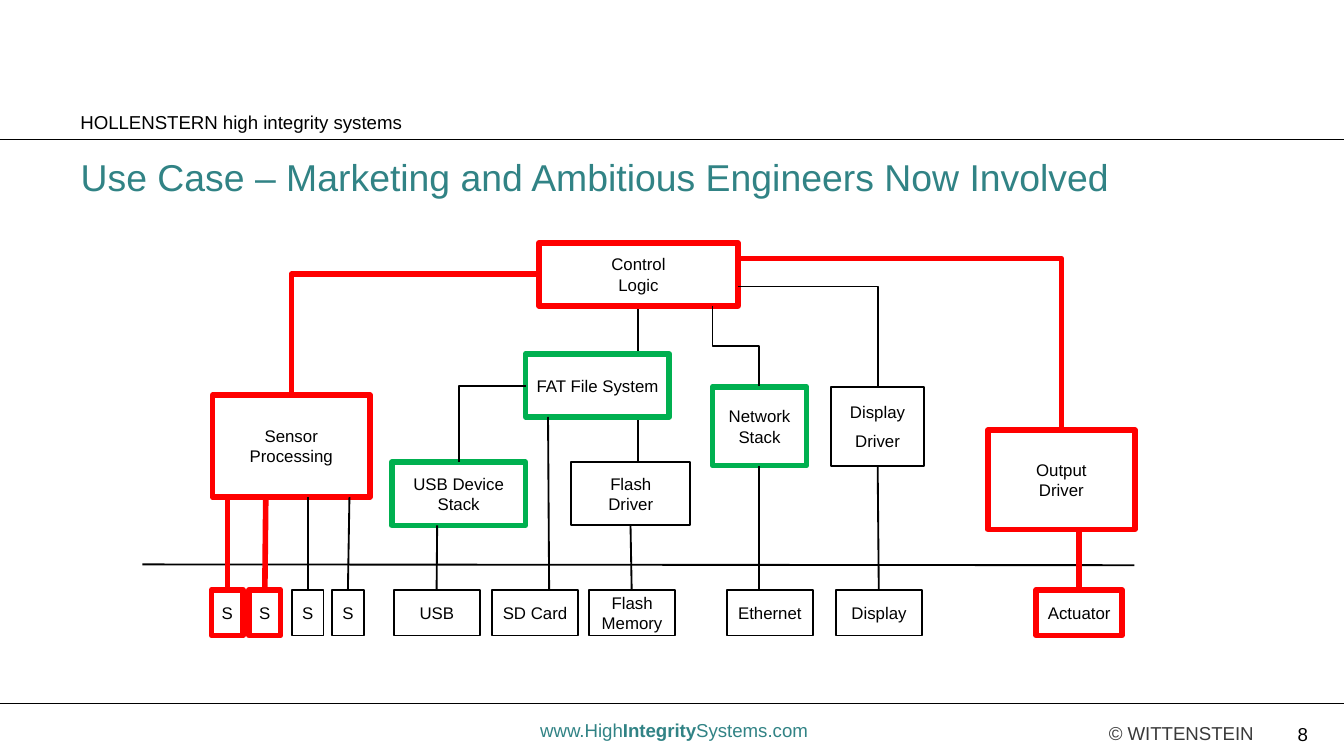
from lxml import etree
from pptx import Presentation
from pptx.dml.color import RGBColor
from pptx.enum import shapes as es, text as et
from pptx.oxml.ns import qn
from pptx.util import Pt

BLACK, RED, GREEN, TEAL = "000000", "FF0000", "00B050", "318385"
hue = RGBColor.from_string
left, mid, right = et.PP_ALIGN.LEFT, et.PP_ALIGN.CENTER, et.PP_ALIGN.RIGHT

deck = Presentation()
deck.slide_width, deck.slide_height = Pt(720), Pt(405)
slide = deck.slides.add_slide(deck.slide_layouts[5])
items = slide.shapes


def write(frame, lines, size, color, align, pad=(0, 0), gap=0):
    frame.word_wrap = True
    frame.margin_left = frame.margin_right = Pt(pad[0])
    frame.margin_top = frame.margin_bottom = Pt(pad[1])
    for i, line in enumerate(lines):
        para = frame.add_paragraph() if i else frame.paragraphs[0]
        para.alignment = align
        para.space_before = Pt(gap if i else 0)
        for words, bold in line:
            run = para.add_run()
            run.text = words
            run.font.name = "Arial"
            run.font.size = Pt(size)
            run.font.bold = bold
            run.font.color.rgb = hue(color)


def wire(x1, y1, x2, y2, color=BLACK, width=1, bent=False):
    kind = es.MSO_CONNECTOR.ELBOW if bent else es.MSO_CONNECTOR.STRAIGHT
    link = items.add_connector(kind, Pt(x1), Pt(y1), Pt(x2), Pt(y2))
    link.line.color.rgb = hue(color)
    link.line.width = Pt(width)
    etree.SubElement(link._element.spPr, qn("a:effectLst"))
    return link


for y in (74.8, 376.7):
    wire(0, y, 720, y, width=0.1)

labels = [
    (277.2, 385.2, 167.8, 10, TEAL, mid, (0, 0),
     [("www.High", False), ("Integrity", True), ("Systems.com", False)]),
    (594, 386.8, 80.6, 9, "3A3A3A", left, (0, 0), [("© WITTENSTEIN", False)]),
    (668.2, 387.4, 32.4, 9, BLACK, right, (0, 0), [("8", False)]),
    (36, 55.7, 260, 19.4, BLACK, left, (7.2, 3.6),
     [("HOLLENSTERN high integrity systems", False)]),
]
for x, y, w, h, color, align, pad, runs in labels:
    frame = items.add_textbox(Pt(x), Pt(y), Pt(w), Pt(h)).text_frame
    write(frame, [runs], 10, color, align, pad)

title = items.title
title.left, title.top, title.width, title.height = Pt(36), Pt(79.2), Pt(664.6), Pt(26.6)
frame = title.text_frame
frame.auto_size = et.MSO_AUTO_SIZE.NONE
frame.vertical_anchor = et.MSO_ANCHOR.TOP
write(frame, [[("Use Case – Marketing and Ambitious Engineers Now Involved", False)]],
      20, TEAL, left, (7.2, 3.6))

wire(76.3, 302.4, 607.7, 302.8)
wire(342, 164.1, 342, 247.7)

row, tall = 316, 24.5
boxes = [
    (288.7, 130.1, 106.6, 33.8, RED, ["Control", "Logic"]),
    (445, 207.2, 50.2, 42.5, BLACK, ["Display", "Driver"]),
    (529.2, 230.4, 78.8, 53.2, RED, ["Output", "Driver"]),
    (113.9, 211.7, 84.3, 54.7, RED, ["Sensor", "Processing"]),
    (306, 247.7, 63.8, 33.8, BLACK, ["Flash", "Driver"]),
    (209.9, 247.7, 71.6, 33.8, GREEN, ["USB Device Stack"]),
    (281.6, 189.6, 77, 33.8, GREEN, ["FAT File System"]),
    (381.7, 207.2, 50.4, 42.2, GREEN, ["Network Stack"]),
]
for x, name in [(211, "USB"), (263.6, "SD Card"), (315.6, "Flash Memory"),
                (389.4, "Ethernet"), (447.9, "Display"), (555.1, "Actuator")]:
    boxes.append((x, row, 46, tall, RED if name == "Actuator" else BLACK, [name]))
for x, color in [(113.3, RED), (133.4, RED), (156.4, BLACK), (177.9, BLACK)]:
    boxes.append((x, row, 17, tall, color, ["S"]))

for x, y, w, h, color, lines in boxes:
    box = items.add_shape(es.MSO_SHAPE.RECTANGLE, Pt(x), Pt(y), Pt(w), Pt(h))
    box.shadow.inherit = False
    if lines[0] == "FAT File System":
        box.fill.solid()
        box.fill.fore_color.rgb = hue("FFFFFF")
    else:
        box.fill.background()
    box.line.color.rgb = hue(color)
    box.line.width = Pt(1 if color == BLACK else 3)
    frame = box.text_frame
    frame.vertical_anchor = et.MSO_ANCHOR.MIDDLE
    gap = 4.5 if lines == ["Display", "Driver"] else 0
    write(frame, [[(line, False)] for line in lines], 9, BLACK, mid, (2, 1), gap)

for x1, y1, x2, color in [
    (337.8, 281.5, 338.4, BLACK), (470.2, 249.9, 470.8, BLACK),
    (578.2, 283.6, 578.2, RED), (121.9, 266.4, 121.9, RED),
    (142.4, 266.4, 141.9, RED), (164.9, 266.4, 164.9, BLACK),
    (187.2, 266.4, 186.4, BLACK), (293.6, 223.4, 294.2, BLACK),
    (234.2, 281.5, 233.9, BLACK), (406.6, 249.6, 406.6, BLACK),
]:
    wire(x1, y1, x2, row, color, 3 if color == RED else 1)

for x1, y1, x2, y2, color in [
    (288.7, 146.9, 156.2, 211.7, RED), (395.3, 138.5, 568.7, 230.4, RED),
    (395.3, 153.5, 470.2, 207.4, BLACK), (281.6, 206.8, 245.8, 247.7, BLACK),
]:
    link = wire(x1, y1, x2, y2, color, 3 if color == RED else 1, True)
    link._element.spPr.find(qn("a:prstGeom")).set("prst", "bentConnector2")

link = wire(415.8, 172.9, 372.6, 198, bent=True)
link._element.spPr.find(qn("a:xfrm")).set("rot", "16200000")

deck.save("out.pptx")
